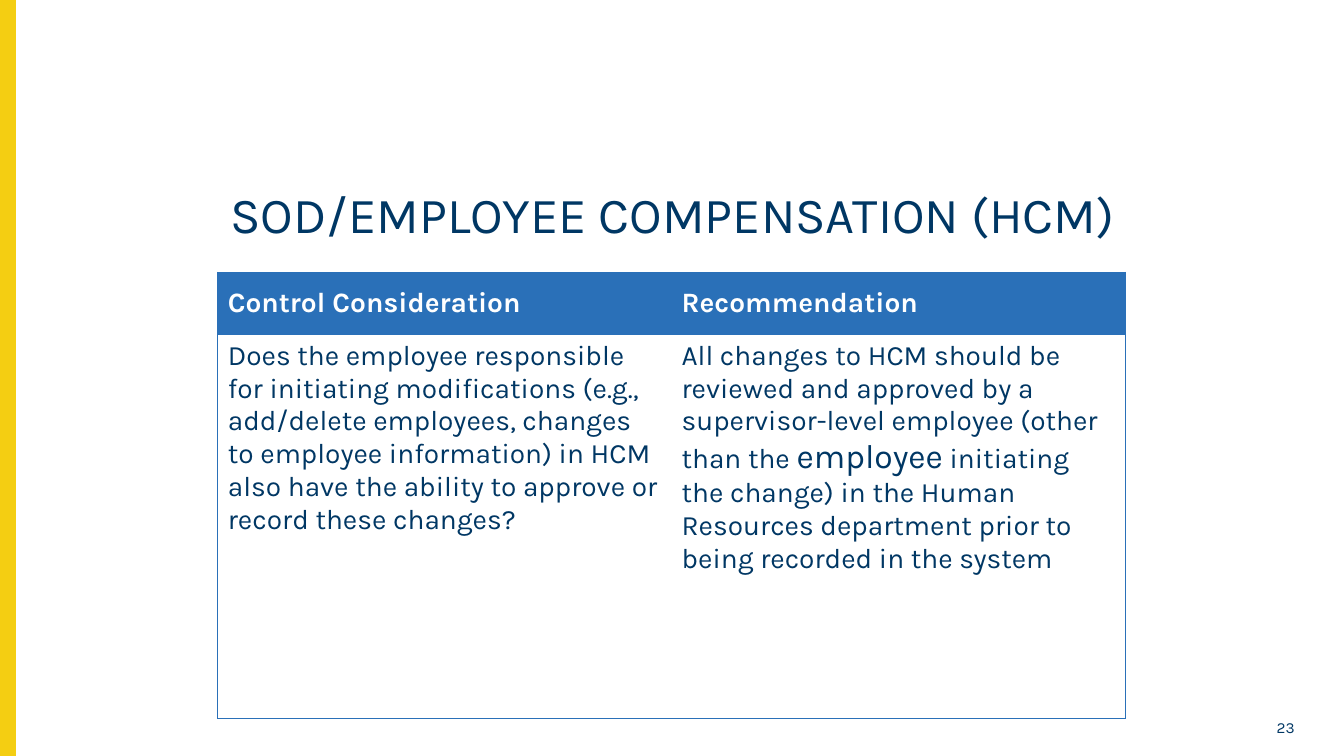
from dataclasses import dataclass

from lxml.etree import SubElement
from pptx import Presentation
from pptx.dml.color import RGBColor
from pptx.enum.shapes import MSO_SHAPE
from pptx.enum.text import MSO_ANCHOR, PP_ALIGN
from pptx.oxml.ns import qn
from pptx.util import Inches, Pt


@dataclass(frozen=True)
class Theme:
    font: str = "Karla"
    navy: str = "003764"
    blue: str = "2A70B8"
    yellow: str = "F4CE12"
    white: str = "FFFFFF"
    title_size: int = 36
    table_size: int = 20
    emphasis_size: int = 24
    number_size: int = 11
    border_width: float = 0.5


@dataclass(frozen=True)
class TextRun:
    text: str
    size: int
    color: str
    bold: bool = False


@dataclass(frozen=True)
class TableEntry:
    row: int
    column: int
    runs: tuple[TextRun, ...]


THEME = Theme()


def header(column: int, text: str) -> TableEntry:
    return TableEntry(0, column, (TextRun(text, THEME.table_size, THEME.white, True),))


def body(text: str, size: int = THEME.table_size) -> TextRun:
    return TextRun(text, size, THEME.navy)


ROW_HEIGHTS = (0.62, 3.81)
COLUMN_WIDTHS = (4.5, 4.5)
ENTRIES = (
    header(0, "Control Consideration"),
    header(1, "Recommendation"),
    TableEntry(1, 0, (
        body("Does the employee responsible for initiating modifications (e.g., "
             "add/delete employees, changes to employee information) in HCM also "
             "have the ability to approve or record these changes?"),
    )),
    TableEntry(1, 1, (
        body("All changes to HCM should be reviewed and approved by a "
             "supervisor-level employee (other than the "),
        body("employee", THEME.emphasis_size),
        body(" initiating the change) in the Human Resources department prior to "
             "being recorded in the system"),
    )),
)


def write_runs(frame, runs: tuple[TextRun, ...], **paragraph_format) -> None:
    paragraph = frame.paragraphs[0]
    for name, value in paragraph_format.items():
        setattr(paragraph, name, value)
    for content in runs:
        run = paragraph.add_run()
        run.text = content.text
        font_format = {"name": THEME.font, "size": Pt(content.size), "bold": content.bold}
        for name, value in font_format.items():
            setattr(run.font, name, value)
        run.font.color.rgb = RGBColor.from_string(content.color)


def set_borders(cell, visible: dict[str, bool]) -> None:
    properties = cell._tc.get_or_add_tcPr()
    for side, shown in visible.items():
        line = SubElement(properties, qn(f"a:ln{side}"), w=str(Pt(THEME.border_width)))
        if shown:
            fill = SubElement(line, qn("a:solidFill"))
            SubElement(fill, qn("a:srgbClr"), val=THEME.blue)
        else:
            SubElement(line, qn("a:noFill"))


def add_side_bar(slide, height: int) -> None:
    bar = slide.shapes.add_shape(MSO_SHAPE.RECTANGLE, 0, 0, Inches(0.15), height)
    bar.shadow.inherit = False
    bar.fill.solid()
    bar.fill.fore_color.rgb = RGBColor.from_string(THEME.yellow)
    bar.line.color.rgb = RGBColor.from_string(THEME.yellow)
    bar.line.width = Pt(1)


def add_title(slide) -> None:
    title = slide.shapes.title
    bounds = {"left": 0.59, "top": 1.83, "width": 12.16, "height": 0.87}
    for name, value in bounds.items():
        setattr(title, name, Inches(value))
    title.text_frame.vertical_anchor = MSO_ANCHOR.TOP
    write_runs(
        title.text_frame,
        (TextRun("SOD/EMPLOYEE COMPENSATION (HCM)", THEME.title_size, THEME.navy),),
        alignment=PP_ALIGN.CENTER, line_spacing=0.9,
    )


def add_control_table(slide) -> None:
    table = slide.shapes.add_table(
        len(ROW_HEIGHTS), len(COLUMN_WIDTHS), Inches(2.16), Inches(2.7),
        Inches(sum(COLUMN_WIDTHS)), Inches(sum(ROW_HEIGHTS)),
    ).table
    table.horz_banding = False
    for row, height in zip(table.rows, ROW_HEIGHTS):
        row.height = Inches(height)
    for column, width in zip(table.columns, COLUMN_WIDTHS):
        column.width = Inches(width)

    for entry in ENTRIES:
        cell = table.cell(entry.row, entry.column)
        is_header = entry.row == 0
        # Outer frame and the rule under the header
        set_borders(cell, {
            "L": entry.column == 0,
            "R": entry.column == len(COLUMN_WIDTHS) - 1,
            "T": True,
            "B": True,
        })
        if is_header:
            cell.fill.solid()
            cell.fill.fore_color.rgb = RGBColor.from_string(THEME.blue)
        else:
            cell.fill.background()
        cell.vertical_anchor = MSO_ANCHOR.MIDDLE if is_header else MSO_ANCHOR.TOP
        write_runs(cell.text_frame, entry.runs)


def add_slide_number(slide) -> None:
    number = slide.shapes.add_textbox(Inches(12.26), Inches(7.09), Inches(0.68), Inches(0.26))
    number.text_frame.word_wrap = True
    number.text_frame.vertical_anchor = MSO_ANCHOR.MIDDLE
    write_runs(
        number.text_frame, (TextRun("23", THEME.number_size, THEME.navy),),
        alignment=PP_ALIGN.RIGHT,
    )


def main() -> None:
    presentation = Presentation()
    presentation.slide_width = Inches(13.33)
    presentation.slide_height = Inches(7.5)
    slide = presentation.slides.add_slide(presentation.slide_layouts[5])
    add_side_bar(slide, presentation.slide_height)
    add_title(slide)
    add_control_table(slide)
    add_slide_number(slide)
    presentation.save("out.pptx")


if __name__ == "__main__":
    main()
